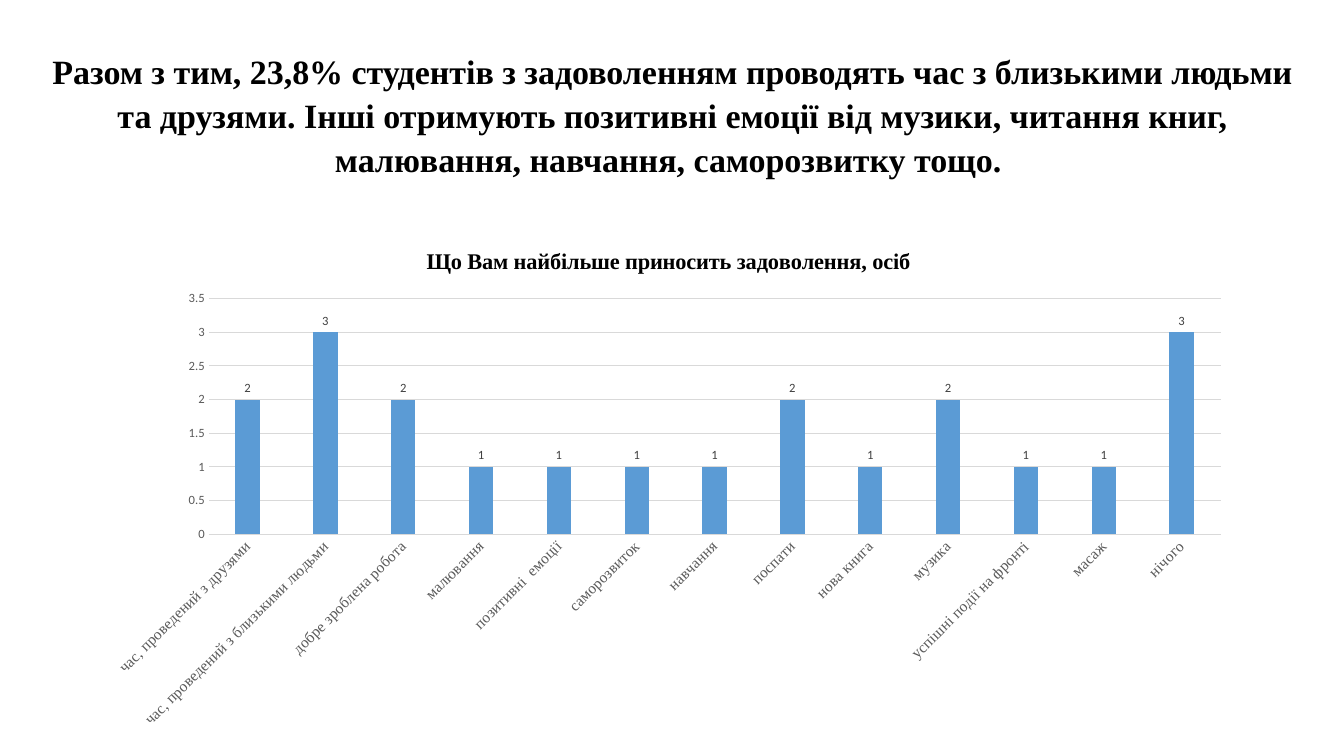
from dataclasses import dataclass

from lxml.etree import SubElement
from pptx import Presentation
from pptx.chart.data import CategoryChartData
from pptx.chart.chart import Chart
from pptx.dml.color import RGBColor
from pptx.enum.chart import XL_CHART_TYPE, XL_LABEL_POSITION, XL_TICK_MARK
from pptx.enum.text import MSO_ANCHOR, PP_ALIGN
from pptx.oxml.ns import qn
from pptx.slide import Slide
from pptx.text.text import Font
from pptx.util import Cm, Pt

BLACK = RGBColor(0x00, 0x00, 0x00)
DARK_GRAY = RGBColor(0x40, 0x40, 0x40)
GRAY = RGBColor(0x59, 0x59, 0x59)
LIGHT_GRAY = RGBColor(0xD9, 0xD9, 0xD9)
BLUE = RGBColor(0x5B, 0x9B, 0xD5)
SERIF = "Times New Roman"
SANS = "Calibri"

HEADING = (
    "Разом з тим, 23,8% студентів з задоволенням проводять час з близькими людьми "
    "та друзями. Інші отримують позитивні емоції від музики, читання книг, "
    "малювання, навчання, саморозвитку тощо. "
)
CHART_TITLE = "Що Вам найбільше приносить задоволення, осіб"


@dataclass(frozen=True)
class Answer:
    name: str
    people: int


ANSWERS = (
    Answer("час, проведений з друзями", 2),
    Answer("час, проведений з близькими людьми", 3),
    Answer("добре зроблена робота", 2),
    Answer("малювання", 1),
    Answer("позитивні  емоції", 1),
    Answer(" саморозвиток", 1),
    Answer("навчання", 1),
    Answer("поспати", 2),
    Answer("нова книга", 1),
    Answer("музика", 2),
    Answer("успішні події на фронті", 1),
    Answer("масаж", 1),
    Answer("нічого", 3),
)


def format_font(font: Font, *, name: str, size: float, color: RGBColor, bold: bool = False) -> None:
    font.name = name
    font.size = Pt(size)
    font.color.rgb = color
    font.bold = bold


def add_heading(page: Slide, text: str, *, size: float, color: RGBColor) -> None:
    box = page.shapes.add_textbox(Cm(0.86), Cm(1.02), Cm(32.18), Cm(3.68))
    frame = box.text_frame
    frame.word_wrap = True
    frame.vertical_anchor = MSO_ANCHOR.MIDDLE
    para = frame.paragraphs[0]
    para.alignment = PP_ALIGN.CENTER
    para.line_spacing = 1.07
    para.space_after = Pt(8)
    span = para.add_run()
    span.text = text
    format_font(span.font, name=SERIF, size=size, color=color, bold=True)


def place_plot(chart: Chart, **shares: float) -> None:
    """Fix the inner plot area, in shares of the chart's width and height."""
    plot_area = chart._chartSpace.chart.plotArea
    layout = plot_area.find(qn("c:layout"))
    if layout is None:
        layout = SubElement(plot_area, qn("c:layout"))
        plot_area.insert(0, layout)
    manual = SubElement(layout, qn("c:manualLayout"))
    settings = {"layoutTarget": "inner", "xMode": "edge", "yMode": "edge", **shares}
    for tag, value in settings.items():
        SubElement(manual, qn(f"c:{tag}")).set("val", str(value))


def style_axes(chart: Chart) -> None:
    names = chart.category_axis
    names.major_tick_mark = XL_TICK_MARK.NONE
    names.format.line.color.rgb = LIGHT_GRAY
    names.format.line.width = Pt(0.75)
    format_font(names.tick_labels.font, name=SERIF, size=11, color=GRAY)
    names._element.find(qn("c:txPr")).find(qn("a:bodyPr")).set("rot", "-2700000")

    values = chart.value_axis
    values.major_tick_mark = XL_TICK_MARK.NONE
    values.minimum_scale = 0
    values.maximum_scale = 3.5
    values.major_unit = 0.5
    values.format.line.fill.background()
    values.major_gridlines.format.line.color.rgb = LIGHT_GRAY
    values.major_gridlines.format.line.width = Pt(0.75)
    format_font(values.tick_labels.font, name=SANS, size=9, color=GRAY)


def style_columns(chart: Chart) -> None:
    plot = chart.plots[0]
    plot.gap_width = 219
    plot.overlap = -27
    plot.vary_by_categories = False
    fill = plot.series[0].format.fill
    fill.solid()
    fill.fore_color.rgb = BLUE
    plot.has_data_labels = True
    labels = plot.data_labels
    labels.show_value = True
    labels.position = XL_LABEL_POSITION.OUTSIDE_END
    format_font(labels.font, name=SANS, size=9, color=DARK_GRAY)


def add_answers_chart(page: Slide) -> None:
    data = CategoryChartData()
    data.categories = [answer.name for answer in ANSWERS]
    data.add_series("Series 1", [answer.people for answer in ANSWERS])
    chart = page.shapes.add_chart(
        XL_CHART_TYPE.COLUMN_CLUSTERED, Cm(2.36), Cm(5.72), Cm(28.98), Cm(12.9), data
    ).chart
    format_font(chart.font, name=SANS, size=10, color=BLACK)
    chart.has_legend = False
    chart.has_title = True
    chart.chart_title.include_in_layout = False
    para = chart.chart_title.text_frame.paragraphs[0]
    span = para.add_run()
    span.text = CHART_TITLE
    format_font(span.font, name=SERIF, size=16, color=BLACK, bold=True)
    style_axes(chart)
    style_columns(chart)
    place_plot(chart, x=0.1, y=0.14, w=0.88, h=0.46)


def main() -> None:
    deck = Presentation()
    deck.slide_width = Cm(33.87)
    deck.slide_height = Cm(19.05)
    page = deck.slides.add_slide(deck.slide_layouts[6])
    add_heading(page, HEADING, size=24.3, color=BLACK)
    add_answers_chart(page)
    deck.save("out.pptx")


if __name__ == "__main__":
    main()
